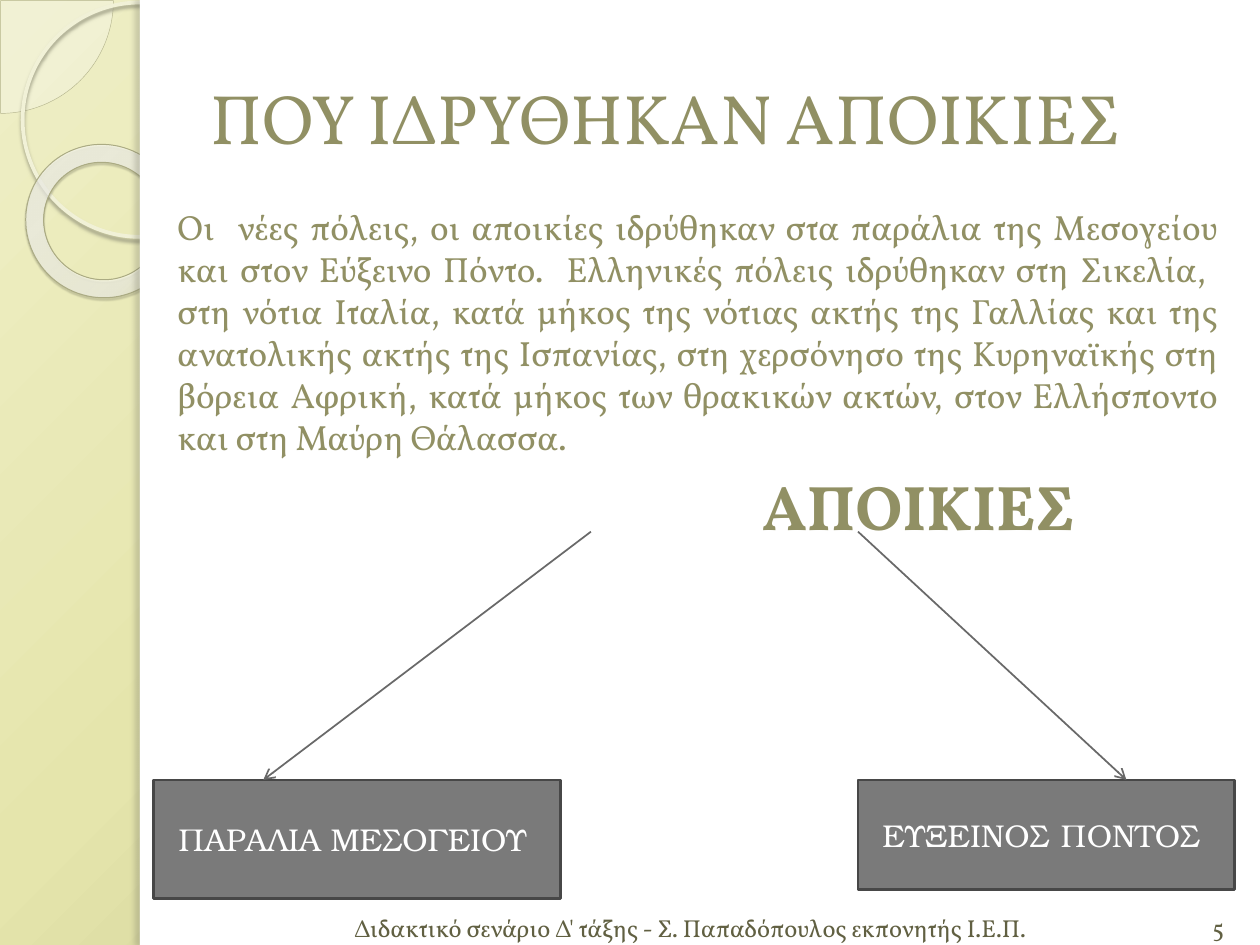
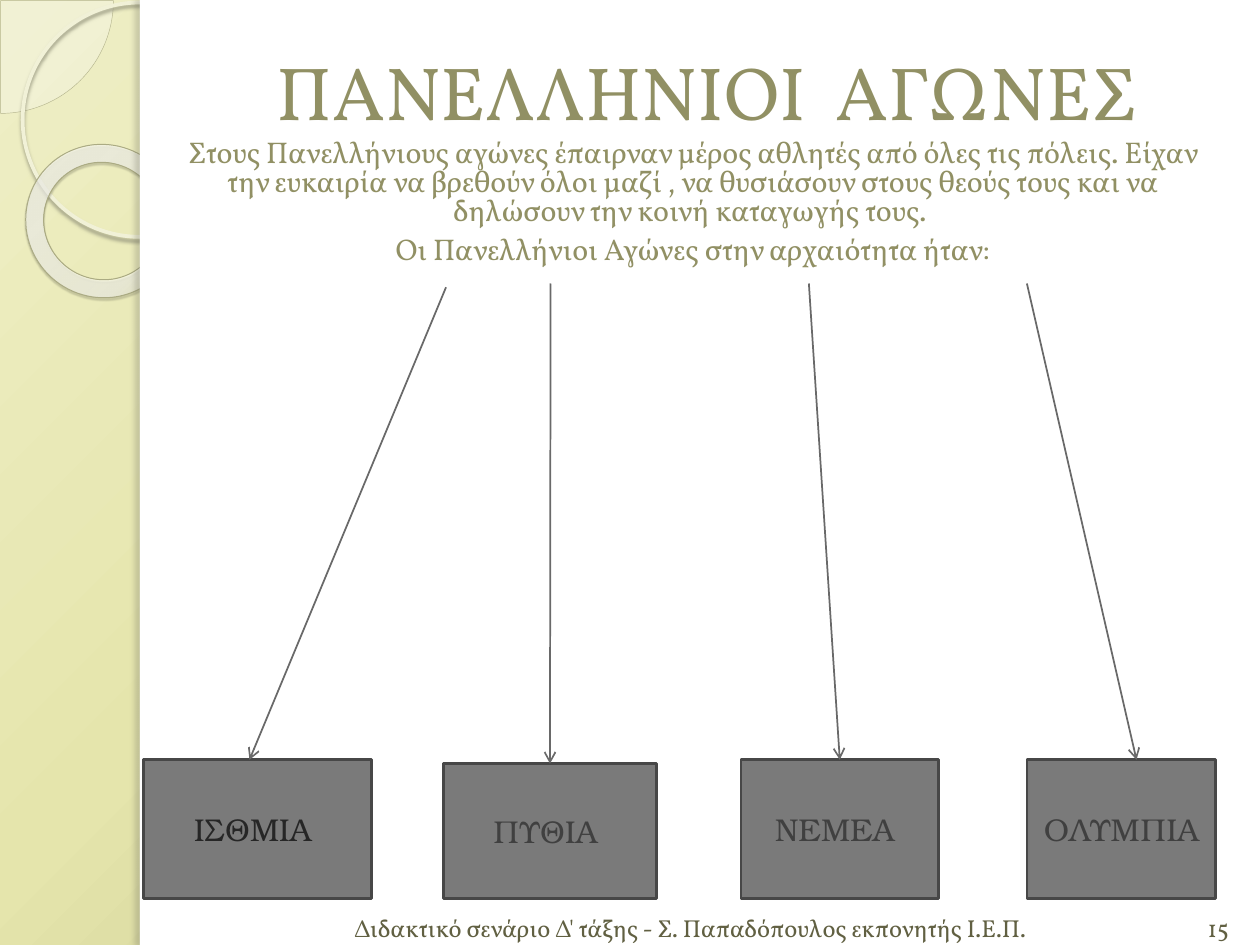
from dataclasses import dataclass
from typing import NamedTuple, Optional

from pptx import Presentation
from pptx.dml.color import RGBColor
from pptx.enum.shapes import MSO_CONNECTOR, MSO_SHAPE
from pptx.enum.text import MSO_ANCHOR, PP_ALIGN
from pptx.oxml import parse_xml
from pptx.oxml.ns import nsdecls, qn
from pptx.util import Inches, Pt


@dataclass(frozen=True)
class Theme:
    text_font: str = "Vollkorn"
    label_font: str = "TeX Gyre Bonum"
    olive: str = "919064"
    footer: str = "616042"
    white: str = "FFFFFF"
    node_fill: str = "7A7A7A"
    node_line: str = "474747"
    arrow: str = "696969"
    pie_fill: str = "F8F8F2"
    pie_line: str = "B5B58E"
    ring_line: str = "F1F1D7"
    donut_line: str = "ABAB83"
    background: tuple = ((0, "EFEFC6", 100), (40, "E5E5AC", 100), (100, "ACAC77", 100))
    donut: tuple = ((0, "FBFBF5", 70), (70, "FEFEFA", 55), (100, "CCCC81", 60))
    body_size: float = 20
    small_body_size: float = 17.1
    heading_size: float = 36
    label_size: float = 18
    footer_size: float = 14


THEME = Theme()
FOOTER = "Διδακτικό σενάριο Δ' τάξης - Σ. Παπαδόπουλος εκπονητής Ι.Ε.Π."


class Box(NamedTuple):
    left: float
    top: float
    width: float
    height: float

    def inches(self):
        return [Inches(length) for length in self]

    def inside(self, area):
        return Box(area.left + self.left, area.top + self.top, self.width, self.height)


class Node(NamedTuple):
    """A labelled box and its arrow; without a tip the arrow joins the top's middle."""
    label: str
    box: Box
    start: tuple
    tip: Optional[float] = None
    color: str = THEME.white


def color_xml(color, alpha):
    return f'<a:srgbClr val="{color}"><a:alpha val="{alpha * 1000}"/></a:srgbClr>'


def paint_radial(properties, stops, focus):
    """Replace the solid fill with a circular gradient; focus is l, t, r, b in percent."""
    stop_xml = "".join(f'<a:gs pos="{position * 1000}">{color_xml(color, alpha)}</a:gs>'
                       for position, color, alpha in stops)
    sides = " ".join(f'{side}="{value * 1000}"' for side, value in zip("ltrb", focus))
    gradient = parse_xml(
        f'<a:gradFill {nsdecls("a")} rotWithShape="1"><a:gsLst>{stop_xml}</a:gsLst>'
        f'<a:path path="circle"><a:fillToRect {sides}/></a:path></a:gradFill>')
    properties.replace(properties.find(qn("a:solidFill")), gradient)


def add_shadow(shape, color, alpha, blur, distance, angle):
    effects = shape._element.spPr.find(qn("a:effectLst"))
    effects.append(parse_xml(
        f'<a:outerShdw {nsdecls("a")} blurRad="{Pt(blur)}" dist="{Pt(distance)}" '
        f'dir="{angle * 60000}" algn="tl" rotWithShape="0">'
        f'{color_xml(color, alpha)}</a:outerShdw>'))


def add_figure(slide, preset, box, fill=None, line=None, line_width=1.0):
    shape = slide.shapes.add_shape(preset, *box.inches())
    shape.shadow.inherit = False
    if fill:
        shape.fill.solid()
        shape.fill.fore_color.rgb = RGBColor.from_string(fill)
    else:
        shape.fill.background()
    if line:
        shape.line.color.rgb = RGBColor.from_string(line)
        shape.line.width = Pt(line_width)
    else:
        shape.line.fill.background()
    return shape


def write(frame, text, size, color=THEME.olive, font=THEME.text_font, bold=False,
          align=PP_ALIGN.LEFT, anchor=MSO_ANCHOR.TOP, indent=0, spacing=None, before=0):
    """Fill an empty frame, or add a paragraph to one that has text."""
    paragraph = frame.add_paragraph() if frame.text else frame.paragraphs[0]
    frame.word_wrap = True
    frame.vertical_anchor = anchor
    paragraph.alignment = align
    paragraph.space_before = Pt(before)
    if spacing:
        paragraph.line_spacing = spacing
    if indent:
        paragraph._p.get_or_add_pPr().set("marL", str(Inches(indent)))
    run = paragraph.add_run()
    run.text = text
    run.font.name = font
    run.font.size = Pt(size)
    run.font.bold = bold
    run.font.color.rgb = RGBColor.from_string(color)


def add_frame(slide, box):
    return slide.shapes.add_textbox(*box.inches()).text_frame


def add_side_band(slide, page):
    slide.background.fill.solid()
    paint_radial(slide._element.find(".//" + qn("p:bgPr")), THEME.background,
                 (-24, -20, 124, 120))
    pie = add_figure(slide, MSO_SHAPE.PIE, Box(-0.89, -0.89, 1.79, 1.79).inside(page),
                     THEME.pie_fill, THEME.pie_line, 0.25)
    pie.adjustments[0] = 0
    pie.adjustments[1] = 54
    pie_color = pie._element.spPr.find(qn("a:solidFill"))[0]
    pie_color.append(parse_xml(f'<a:alpha {nsdecls("a")} val="33000"/>'))

    ring = add_figure(slide, MSO_SHAPE.OVAL, Box(0.18, 0.02, 1.86, 1.86).inside(page),
                      line=THEME.ring_line, line_width=2.15)
    add_shadow(ring, "98987F", 85, 2, 2, 90)

    donut = add_figure(slide, MSO_SHAPE.DONUT, Box(0.2, 1.15, 1.23, 1.21).inside(page),
                       THEME.white, THEME.donut_line, 0.58)
    donut.adjustments[0] = 0.118
    donut.rotation = 38.6
    paint_radial(donut._element.spPr, THEME.donut, (-408, -50, 508, 150))
    add_shadow(donut, "4E4E3D", 35, 1, 1.2, 75)

    band = 1.11
    add_figure(slide, MSO_SHAPE.RECTANGLE,
               Box(band, 0, page.width - band, page.height).inside(page), THEME.white)
    edge = add_figure(slide, MSO_SHAPE.RECTANGLE,
                      Box(band, 0, 0.08, page.height).inside(page), THEME.white)
    add_shadow(edge, "646457", 25, 3, 3, 180)


def add_footer(slide, box, number):
    number_width = 0.5
    credit_width = box.width - number_width
    for text, left, width in ((FOOTER, 0, credit_width),
                              (number, credit_width, number_width)):
        frame = add_frame(slide, Box(left, 0, width, box.height).inside(box))
        write(frame, text, THEME.footer_size, THEME.footer,
              align=PP_ALIGN.CENTER, anchor=MSO_ANCHOR.BOTTOM)


def add_arrow(slide, start, tip):
    arrow = slide.shapes.add_connector(
        MSO_CONNECTOR.STRAIGHT, *(Inches(length) for length in (*start, *tip)))
    arrow.line.color.rgb = RGBColor.from_string(THEME.arrow)
    arrow.line.width = Pt(1)
    arrow.line._get_or_add_ln().append(
        parse_xml(f'<a:tailEnd {nsdecls("a")} type="arrow"/>'))
    arrow._element.spPr.append(parse_xml(f'<a:effectLst {nsdecls("a")}/>'))
    return arrow


def add_diagram(slide, area, nodes):
    for node in nodes:
        box = node.box.inside(area)
        shape = add_figure(slide, MSO_SHAPE.RECTANGLE, box,
                           THEME.node_fill, THEME.node_line, 1.5)
        write(shape.text_frame, node.label, THEME.label_size, node.color,
              THEME.label_font, align=PP_ALIGN.CENTER, anchor=MSO_ANCHOR.MIDDLE)
        tip = box.width / 2 if node.tip is None else node.tip
        arrow = add_arrow(slide, (area.left + node.start[0], area.top + node.start[1]),
                          (box.left + tip, box.top))
        if node.tip is None:
            arrow.end_connect(shape, 0)


def add_base_slide(deck, page, number, title, title_box, **title_format):
    slide = deck.slides.add_slide(deck.slide_layouts[6])
    add_side_band(slide, page)
    write(add_frame(slide, title_box), title, anchor=MSO_ANCHOR.MIDDLE, **title_format)
    add_footer(slide, Box(1.54, 7.01, 8.38, 0.52).inside(page), number)
    return slide


def add_colonies_slide(deck, page):
    slide = add_base_slide(deck, page, "5", "ΠΟΥ ΙΔΡΥΘΗΚΑΝ ΑΠΟΙΚΙΕΣ",
                           Box(1.57, 0.3, 8.2, 1.25).inside(page), size=40)
    body = add_frame(slide, Box(1.22, 1.58, 8.55, 3.19).inside(page))
    write(body,
          "Οι  νέες πόλεις, οι αποικίες ιδρύθηκαν στα παράλια της Μεσογείου και στον "
          "Εύξεινο Πόντο.  Ελληνικές πόλεις ιδρύθηκαν στη Σικελία,  στη νότια Ιταλία, "
          "κατά μήκος της νότιας ακτής της Γαλλίας και της ανατολικής ακτής της "
          "Ισπανίας, στη χερσόνησο της Κυρηναϊκής στη βόρεια Αφρική, κατά μήκος των "
          "θρακικών ακτών, στον Ελλήσποντο και στη Μαύρη Θάλασσα.",
          THEME.body_size, align=PP_ALIGN.JUSTIFY, indent=0.09)
    write(body, "ΑΠΟΙΚΙΕΣ", THEME.heading_size, bold=True, indent=4.73, before=6)
    add_diagram(slide, Box(1.22, 4.22, 8.58, 2.91).inside(page), [
        Node("ΠΑΡΑΛΙΑ ΜΕΣΟΓΕΙΟΥ ", Box(0, 1.97, 3.23, 0.94), (3.47, 0), 0.87),
        Node("ΕΥΞΕΙΝΟΣ ΠΟΝΤΟΣ ", Box(5.59, 1.97, 2.99, 0.87), (5.59, 0), 2.13),
    ])


def add_games_slide(deck, page):
    slide = add_base_slide(deck, page, "15", "ΠΑΝΕΛΛΗΝΙΟΙ  ΑΓΩΝΕΣ ",
                           Box(1.57, 0.13, 8.2, 1.18).inside(page), size=43,
                           align=PP_ALIGN.CENTER)
    body = add_frame(slide, Box(1.14, 1.07, 8.63, 1.1).inside(page))
    body_format = dict(size=THEME.small_body_size, align=PP_ALIGN.CENTER,
                       indent=0.09, spacing=0.8)
    write(body,
          "Στους Πανελλήνιους αγώνες έπαιρναν μέρος αθλητές από όλες τις πόλεις. "
          "Είχαν την ευκαιρία να βρεθούν όλοι μαζί , να θυσιάσουν στους θεούς τους "
          "και να δηλώσουν την κοινή καταγωγής τους. ", **body_format)
    write(body, "Οι Πανελλήνιοι Αγώνες στην αρχαιότητα ήταν:", before=6, **body_format)
    dark, grey = "262626", "404040"
    add_diagram(slide, Box(1.14, 2.25, 8.51, 4.88).inside(page), [
        Node("ΙΣΘΜΙΑ ", Box(0, 3.78, 1.81, 1.1), (2.4, 0.03), 0.84, dark),
        Node("ΠΥΘΙΑ ", Box(2.38, 3.81, 1.69, 1.07), (3.23, 0), color=grey),
        Node("ΝΕΜΕΑ ", Box(4.74, 3.78, 1.57, 1.1), (5.28, 0), color=grey),
        Node("ΟΛΥΜΠΙΑ ", Box(7.01, 3.78, 1.5, 1.1), (7.01, 0), 0.87, grey),
    ])


def main():
    deck = Presentation()
    page = Box(0, 0, 10, 7.5)
    deck.slide_width, deck.slide_height = Inches(page.width), Inches(page.height)
    add_colonies_slide(deck, page)
    add_games_slide(deck, page)
    deck.save("out.pptx")


if __name__ == "__main__":
    main()
